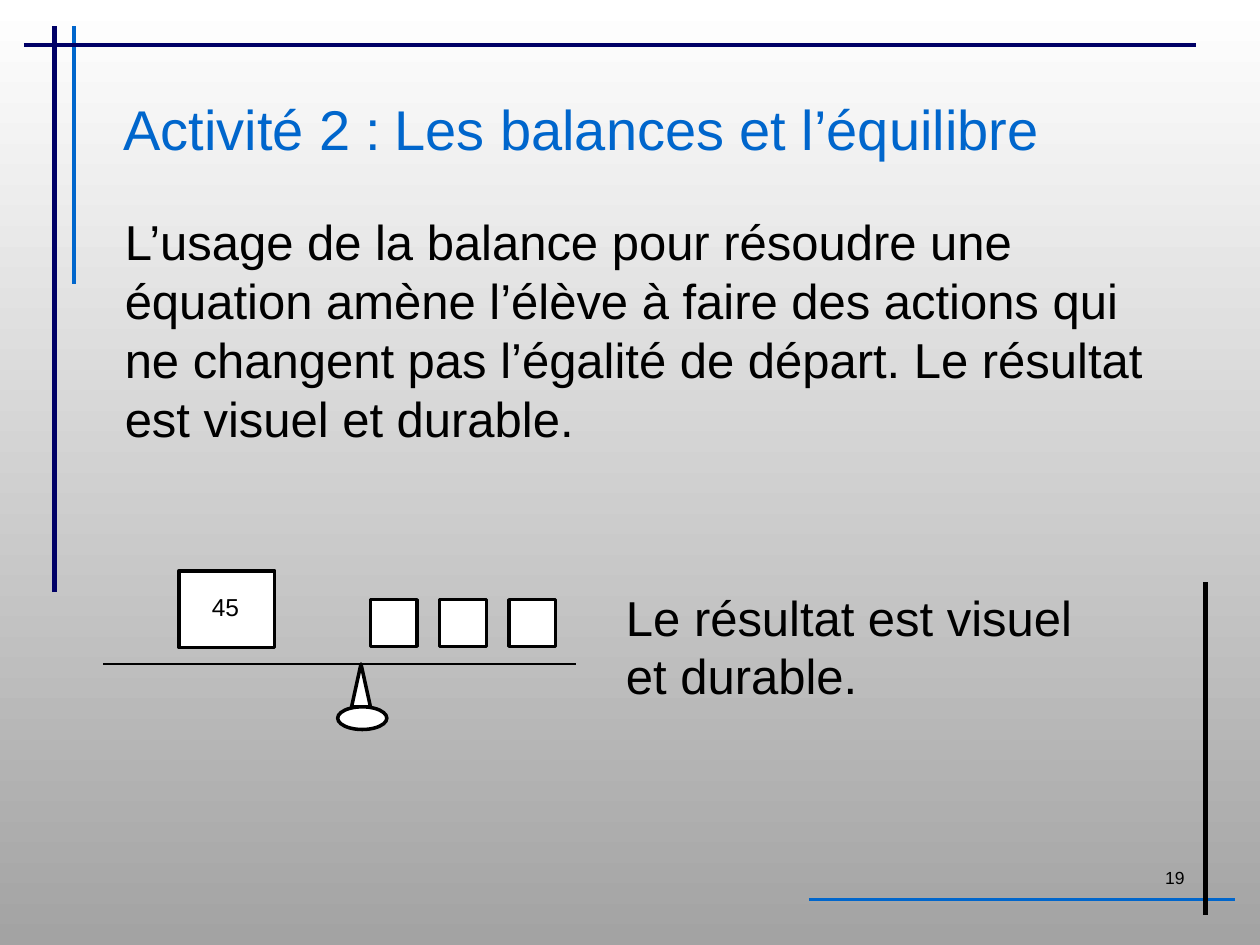
from dataclasses import dataclass

from lxml.etree import SubElement
from pptx import Presentation
from pptx.dml.color import RGBColor
from pptx.enum.shapes import MSO_CONNECTOR, MSO_SHAPE
from pptx.enum.text import MSO_ANCHOR, MSO_AUTO_SIZE, PP_ALIGN
from pptx.oxml.ns import qn
from pptx.util import Inches, Pt

COLORS = {"black": "000000", "white": "FFFFFF", "gray": "A3A3A3",
          "blue": "0066CC", "navy": "000066"}


@dataclass
class Rule:
    start: tuple[float, float]
    end: tuple[float, float]
    color: str
    width: float


@dataclass
class Part:
    kind: MSO_SHAPE
    box: tuple[float, float, float, float]


def rgb(name: str) -> RGBColor:
    return RGBColor.from_string(COLORS[name])


def draw_rule(slide, rule: Rule) -> None:
    points = [Inches(value) for value in (*rule.start, *rule.end)]
    connector = slide.shapes.add_connector(MSO_CONNECTOR.STRAIGHT, *points)
    connector.line.color.rgb = rgb(rule.color)
    connector.line.width = Pt(rule.width)
    SubElement(connector.element.spPr, qn("a:effectLst"))


def draw_part(slide, part: Part) -> None:
    shape = slide.shapes.add_shape(part.kind, *map(Inches, part.box))
    shape.shadow.inherit = False
    shape.fill.solid()
    shape.fill.fore_color.rgb = rgb("white")
    shape.line.color.rgb = rgb("black")
    shape.line.width = Pt(2)


def place(shape, box: tuple[float, float, float, float]) -> None:
    shape.left, shape.top, shape.width, shape.height = map(Inches, box)


def write(shape, text: str, size: float, color: str = "black",
          align: PP_ALIGN = PP_ALIGN.LEFT, before: float = 0):
    frame = shape.text_frame
    frame.text = text
    frame.word_wrap = True
    frame.auto_size = MSO_AUTO_SIZE.NONE
    frame.vertical_anchor = MSO_ANCHOR.TOP
    paragraph = frame.paragraphs[0]
    paragraph.alignment = align
    paragraph.space_before = Pt(before)
    for run in paragraph.runs:
        run.font.name = "Arial"
        run.font.size = Pt(size)
        run.font.color.rgb = rgb(color)
    return paragraph


def set_indent(paragraph, margin: float, first: float) -> None:
    properties = paragraph._p.get_or_add_pPr()
    properties.set("marL", str(Inches(margin)))
    properties.set("indent", str(Inches(first)))


FRAME_RULES = [
    Rule((0.59, 0.21), (0.59, 2.25), "blue", 2.25),
    Rule((0.43, 4.7), (0.43, 0.21), "navy", 3),
    Rule((0.19, 0.36), (9.49, 0.36), "navy", 2.25),
    Rule((6.42, 7.14), (9.8, 7.14), "blue", 1.5),
    Rule((9.57, 4.62), (9.57, 7.26), "black", 3),
]
BEAM = Rule((0.82, 5.27), (4.57, 5.27), "black", 0.75)
SCALE_PARTS = [
    Part(MSO_SHAPE.RECTANGLE, (1.42, 4.53, 0.76, 0.61)),
    *(Part(MSO_SHAPE.RECTANGLE, (2.94 + 0.55 * index, 4.76, 0.37, 0.37))
      for index in range(3)),
    Part(MSO_SHAPE.ISOSCELES_TRIANGLE, (2.79, 5.27, 0.15, 0.34)),
    Part(MSO_SHAPE.OVAL, (2.68, 5.61, 0.39, 0.18)),
]


def main() -> None:
    presentation = Presentation()
    presentation.slide_width, presentation.slide_height = Inches(10), Inches(7.5)
    slide = presentation.slides.add_slide(presentation.slide_layouts[1])

    # Background, white at the top
    background = slide.background.fill
    background.gradient()
    background.gradient_angle = 270
    for stop, position, color in zip(background.gradient_stops, (0, 1),
                                     ("white", "gray")):
        stop.position = position
        stop.color.rgb = rgb(color)

    # Title with a hanging indent up to the tab
    title = slide.shapes.title
    place(title, (0.88, 0.64, 8.63, 1.25))
    paragraph = write(title, "Activité 2 :\tLes balances et l’équilibre", 32, "blue")
    title.text_frame.margin_top = Inches(0.11)
    set_indent(paragraph, 2.15, -2.15)

    # Body without bullet
    body = slide.placeholders[1]
    place(body, (0.89, 1.63, 8.54, 2.3))
    paragraph = write(
        body, "L’usage de la balance pour résoudre une équation amène l’élève "
        "à faire des actions qui ne changent pas l’égalité de départ. "
        "Le résultat est visuel et durable.", 28, before=5.6)
    set_indent(paragraph, 0, 0)
    SubElement(paragraph._p.get_or_add_pPr(), qn("a:buNone"))

    # Frame rules and balance
    for rule in [*FRAME_RULES, BEAM]:
        draw_rule(slide, rule)
    for part in SCALE_PARTS:
        draw_part(slide, part)

    # Loose texts: weight, conclusion, page number
    for text, box, size, align, before in [
        ("45", (1.42, 4.65, 0.74, 0.5), 14, PP_ALIGN.CENTER, 2.8),
        ("Le résultat est visuel et durable.", (4.87, 4.61, 3.94, 1.06),
         28, PP_ALIGN.LEFT, 5.6),
        ("19", (7.17, 6.83, 2.33, 0.5), 10, PP_ALIGN.RIGHT, 0),
    ]:
        textbox = slide.shapes.add_textbox(*map(Inches, box))
        write(textbox, text, size, align=align, before=before)

    presentation.save("out.pptx")


if __name__ == "__main__":
    main()
